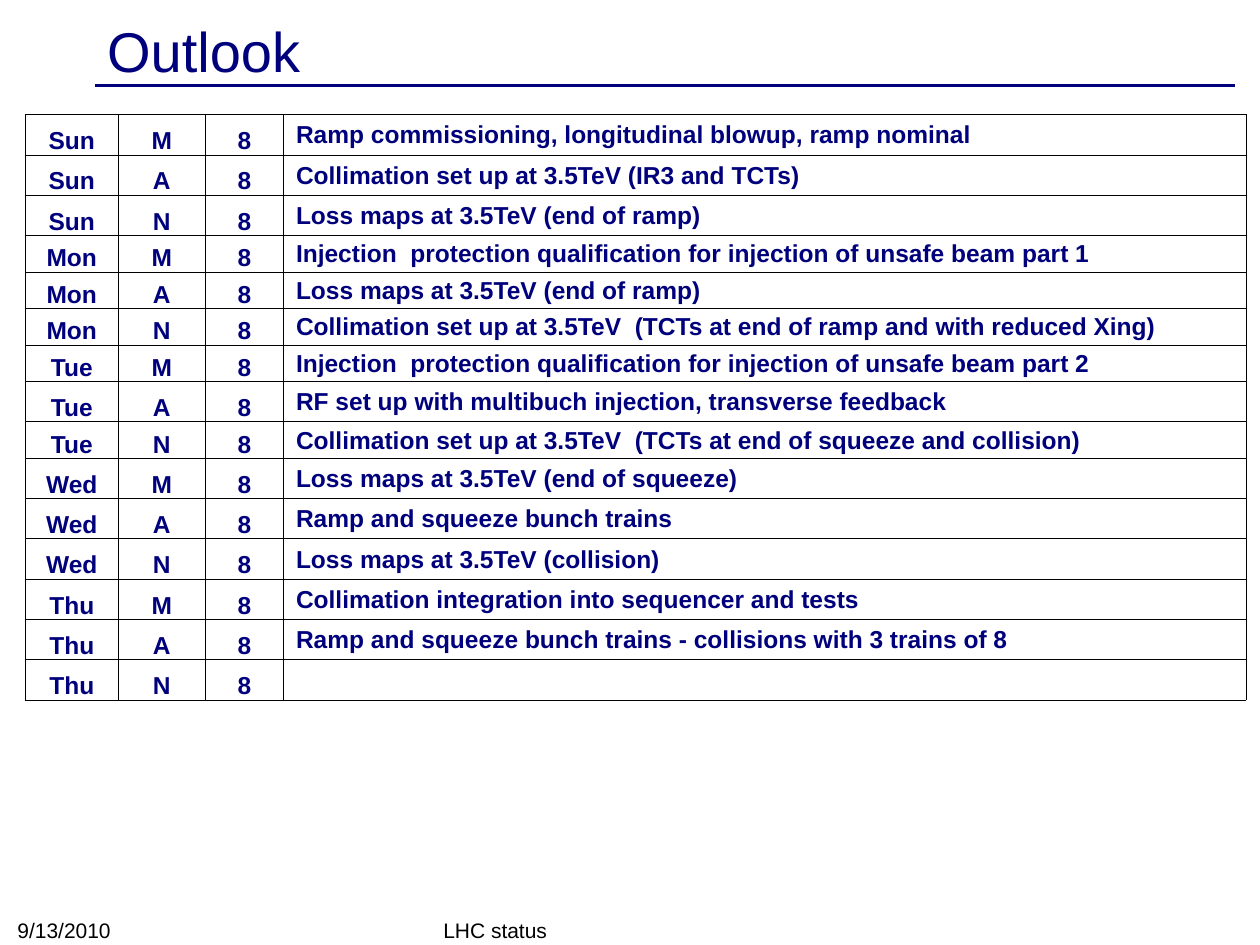
import dataclasses
import itertools

import lxml.etree
import pptx
import pptx.dml.color
import pptx.enum.shapes
import pptx.enum.text
import pptx.oxml.ns
import pptx.util


@dataclasses.dataclass(frozen=True)
class Theme:
    font: str = "Arial"
    navy: str = "00007D"
    black: str = "000000"
    title_size: int = 32
    table_size: int = 14
    footer_size: int = 12


theme = Theme()
PX = 9144
ALIGN = pptx.enum.text.PP_ALIGN
ANCHOR = pptx.enum.text.MSO_ANCHOR
qn = pptx.oxml.ns.qn


def style(paragraph, size, color, bold=False, align=ALIGN.LEFT):
    paragraph.alignment = align
    paragraph.font.name = theme.font
    paragraph.font.size = pptx.util.Pt(size)
    paragraph.font.bold = bold
    paragraph.font.color.rgb = pptx.dml.color.RGBColor.from_string(color)


def add_borders(cell):
    properties = cell._tc.get_or_add_tcPr()
    for side in ("lnL", "lnR", "lnT", "lnB"):
        line = lxml.etree.SubElement(properties, qn(f"a:{side}"), w=str(pptx.util.Pt(0.5)))
        fill = lxml.etree.SubElement(line, qn("a:solidFill"))
        lxml.etree.SubElement(fill, qn("a:srgbClr"), val=theme.black)


presentation = pptx.Presentation()
presentation.slide_width = 1000 * PX
presentation.slide_height = 750 * PX
slide = presentation.slides.add_slide(presentation.slide_layouts[5])

rule = slide.shapes.add_connector(
    pptx.enum.shapes.MSO_CONNECTOR.STRAIGHT, 75 * PX, 68 * PX, 980 * PX, 68 * PX
)
rule.line.color.rgb = pptx.dml.color.RGBColor.from_string(theme.navy)
rule.line.width = pptx.util.Pt(2)
lxml.etree.SubElement(rule._element.spPr, qn("a:effectLst"))

title = slide.shapes.title
title.left, title.top, title.width, title.height = 75 * PX, 11 * PX, 900 * PX, 57 * PX
title.text_frame.text = "Outlook"
title.text_frame.vertical_anchor = ANCHOR.MIDDLE
style(title.text_frame.paragraphs[0], theme.title_size, theme.navy)

days = ["Sun", "Mon", "Tue", "Wed", "Thu"]
shifts = ["M", "A", "N"]
tall, short = 32, 29
tasks = [
    ("Ramp commissioning, longitudinal blowup, ramp nominal", tall),
    ("Collimation set up at 3.5TeV (IR3 and TCTs)", tall),
    ("Loss maps at 3.5TeV (end of ramp)", tall),
    ("Injection  protection qualification for injection of unsafe beam part 1", short),
    ("Loss maps at 3.5TeV (end of ramp)", short),
    ("Collimation set up at 3.5TeV  (TCTs at end of ramp and with reduced Xing)", short),
    ("Injection  protection qualification for injection of unsafe beam part 2", short),
    ("RF set up with multibuch injection, transverse feedback", tall),
    ("Collimation set up at 3.5TeV  (TCTs at end of squeeze and collision)", short),
    ("Loss maps at 3.5TeV (end of squeeze)", tall),
    ("Ramp and squeeze bunch trains", tall),
    ("Loss maps at 3.5TeV (collision)", tall),
    ("Collimation integration into sequencer and tests", tall),
    ("Ramp and squeeze bunch trains - collisions with 3 trains of 8", tall),
    ("", tall),
]
column_widths = [74, 69, 62, 764]
table_height = sum(height for task, height in tasks)
table = slide.shapes.add_table(
    len(tasks), len(column_widths), 20 * PX, 91 * PX, sum(column_widths) * PX, table_height * PX
).table
table.first_row = False
table.horz_banding = False
for column, width in zip(table.columns, column_widths):
    column.width = width * PX

schedule = zip(table.rows, itertools.product(days, shifts), tasks)
for row, (day, shift), (task, height) in schedule:
    row.height = height * PX
    for cell, text in zip(row.cells, (day, shift, "8", task)):
        is_task = text == task
        cell.text = text
        cell.margin_left = (10 if is_task else 1) * PX
        cell.margin_right = cell.margin_top = 1 * PX
        cell.margin_bottom = 0
        cell.vertical_anchor = ANCHOR.MIDDLE if is_task else ANCHOR.BOTTOM
        add_borders(cell)
        cell.fill.background()
        align = ALIGN.LEFT if is_task else ALIGN.CENTER
        style(cell.text_frame.paragraphs[0], theme.table_size, theme.navy, True, align)

footers = [
    ("LHC status", 342, 725, 317, 28),
    ("9/13/2010", 4, 724, 233, 29),
]
for text, left, top, width, height in footers:
    shape = slide.shapes.add_textbox(left * PX, top * PX, width * PX, height * PX)
    shape.text_frame.word_wrap = True
    shape.text_frame.vertical_anchor = ANCHOR.BOTTOM
    shape.text_frame.text = text
    style(shape.text_frame.paragraphs[0], theme.footer_size, theme.black)

presentation.save("out.pptx")
